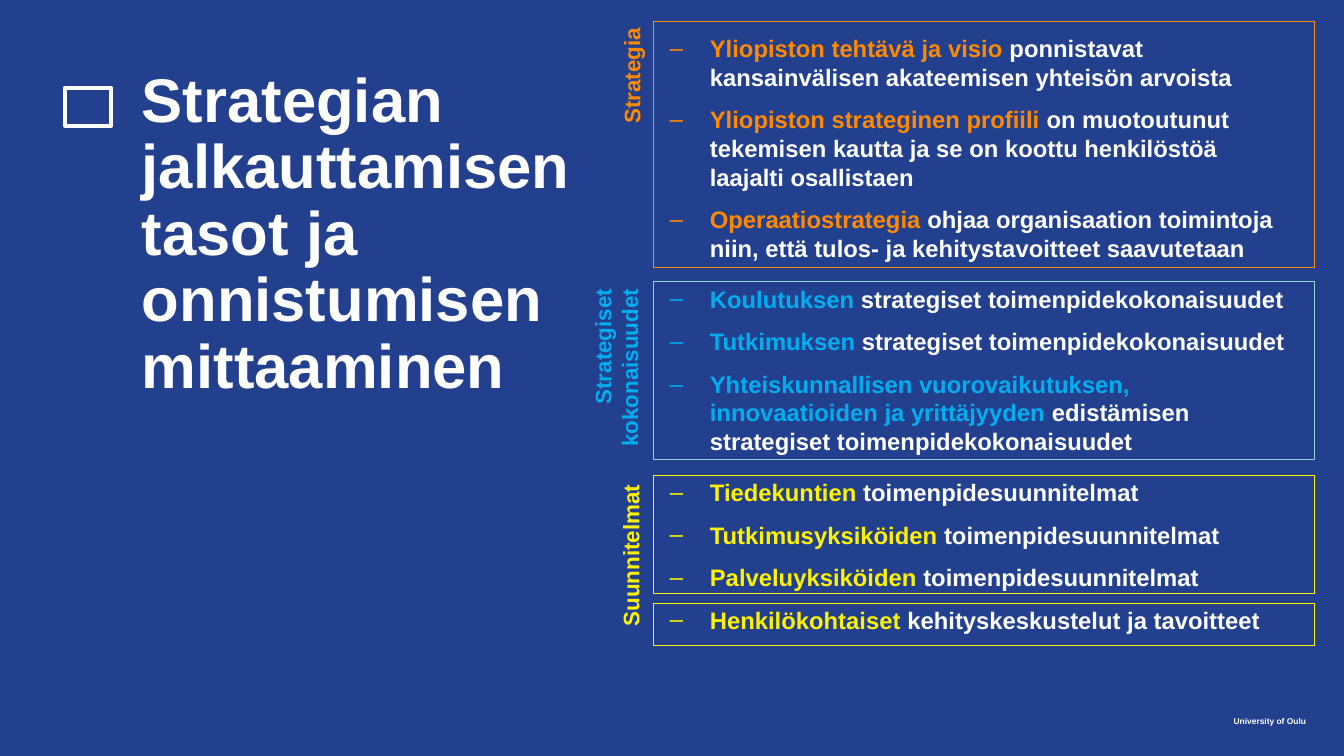
from lxml.etree import SubElement
from pptx import Presentation
from pptx.dml.color import RGBColor
from pptx.enum.shapes import MSO_SHAPE
from pptx.enum.text import MSO_ANCHOR, PP_ALIGN
from pptx.oxml.ns import qn
from pptx.util import Pt

COLORS = {
    "background": "23408F",
    "white": "FFFFFF",
    "orange": "FF8900",
    "blue": "00AEEF",
    "mint": "93D7CB",
    "yellow": "FFF200",
}
TITLE = "Strategian jalkauttamisen tasot ja onnistumisen mittaaminen"
FOOTER = "University of Oulu"

# label, label place (left, top, width, height), colour, points (highlight, rest)
LEVELS = [
    ("Strategia", (613, 18, 47, 234), "orange", [
        ("Yliopiston tehtävä ja visio ",
         "ponnistavat kansainvälisen akateemisen yhteisön arvoista"),
        ("Yliopiston strateginen profiili ",
         "on muotoutunut tekemisen kautta ja se on koottu henkilöstöä laajalti osallistaen"),
        ("Operaatiostrategia ",
         "ohjaa organisaation toimintoja niin, että tulos- ja kehitystavoitteet saavutetaan"),
    ]),
    ("Strategiset kokonaisuudet", (584, 279, 75, 190), "blue", [
        ("Koulutuksen", " strategiset toimenpidekokonaisuudet"),
        ("Tutkimuksen", " strategiset toimenpidekokonaisuudet"),
        ("Yhteiskunnallisen vuorovaikutuksen, innovaatioiden ja yrittäjyyden ",
         "edistämisen strategiset toimenpidekokonaisuudet"),
    ]),
    ("Suunnitelmat", (612, 475, 47, 177), "yellow", [
        ("Tiedekuntien", " toimenpidesuunnitelmat"),
        ("Tutkimusyksiköiden", " toimenpidesuunnitelmat"),
        ("Palveluyksiköiden", " toimenpidesuunnitelmat"),
        ("Henkilökohtaiset ", "kehityskeskustelut ja tavoitteet"),
    ]),
]
FRAME_LEFT, FRAME_WIDTH = 653, 661
FRAMES = [  # top, height, colour
    (21, 246, "orange"),
    (281, 178, "mint"),
    (475, 118, "yellow"),
    (603, 42, "yellow"),
]
INDENT = 40
POINT_GAP, LEVEL_GAP = Pt(10), Pt(16)
EMU_PER_PX = 914400 / 100.8


def px(length):
    return round(length * EMU_PER_PX)


def rgb(color):
    return RGBColor.from_string(COLORS[color])


def style(font, size, color):
    font.name = "Arial"
    font.size = Pt(size)
    font.bold = True
    font.color.rgb = rgb(color)


def add_text(slide, place, text="", size=17, color="white", align=PP_ALIGN.LEFT):
    frame = slide.shapes.add_textbox(*map(px, place)).text_frame
    frame.word_wrap = True
    frame.text = text
    paragraph = frame.paragraphs[0]
    paragraph.alignment = align
    style(paragraph.font, size, color)
    return frame


def add_dash(paragraph, color):
    """Give the paragraph a hanging dash in the colour of its level."""
    properties = paragraph._p.get_or_add_pPr()
    properties.set("marL", str(px(INDENT)))
    properties.set("indent", str(-px(INDENT)))
    bullet_color = SubElement(properties, qn("a:buClr"))
    SubElement(bullet_color, qn("a:srgbClr")).set("val", COLORS[color])
    SubElement(properties, qn("a:buFont")).set("typeface", "Arial")
    SubElement(properties, qn("a:buChar")).set("char", "‒")


def add_points(slide):
    body = add_text(slide, (660, 29, 646, 632))
    paragraph = body.paragraphs[0]
    for _, _, color, points in LEVELS:
        for number, (highlight, rest) in enumerate(points, 1):
            if paragraph.runs:
                paragraph = body.add_paragraph()
            add_dash(paragraph, color)
            paragraph.space_after = LEVEL_GAP if number == len(points) else POINT_GAP
            for text, run_color in ((highlight, color), (rest, "white")):
                run = paragraph.add_run()
                run.text = text
                style(run.font, 17, run_color)


def add_frames(slide):
    for top, height, color in FRAMES:
        frame = slide.shapes.add_shape(
            MSO_SHAPE.RECTANGLE, *map(px, (FRAME_LEFT, top, FRAME_WIDTH, height)))
        frame.shadow.inherit = False
        frame.fill.background()
        frame.line.color.rgb = rgb(color)
        frame.line.width = Pt(0.5)


def add_labels(slide):
    for label, place, color, _ in LEVELS:
        text = add_text(slide, place, label, 16, color, PP_ALIGN.RIGHT)
        text._txBody.bodyPr.set("vert", "vert270")


def add_emblem(slide):
    emblem = slide.shapes.add_shape(MSO_SHAPE.RECTANGLE, *map(px, (65, 88, 46, 38)))
    emblem.shadow.inherit = False
    emblem.fill.background()
    emblem.line.color.rgb = rgb("white")
    emblem.line.width = Pt(3)


def add_footer(slide):
    footer = add_text(slide, (1070, 709, 236, 24), FOOTER, 6, align=PP_ALIGN.RIGHT)
    footer.vertical_anchor = MSO_ANCHOR.MIDDLE
    footer.margin_left = footer.margin_right = 0
    footer.margin_top = footer.margin_bottom = 0


def main():
    deck = Presentation()
    deck.slide_width, deck.slide_height = px(1344), px(756)
    slide = deck.slides.add_slide(deck.slide_layouts[6])
    slide.background.fill.solid()
    slide.background.fill.fore_color.rgb = rgb("background")

    add_footer(slide)
    add_emblem(slide)
    title = add_text(slide, (132, 64, 500, 393), TITLE, 44)
    title.paragraphs[0].line_spacing = 0.9
    add_points(slide)
    add_frames(slide)
    add_labels(slide)
    deck.save("out.pptx")


if __name__ == "__main__":
    main()
